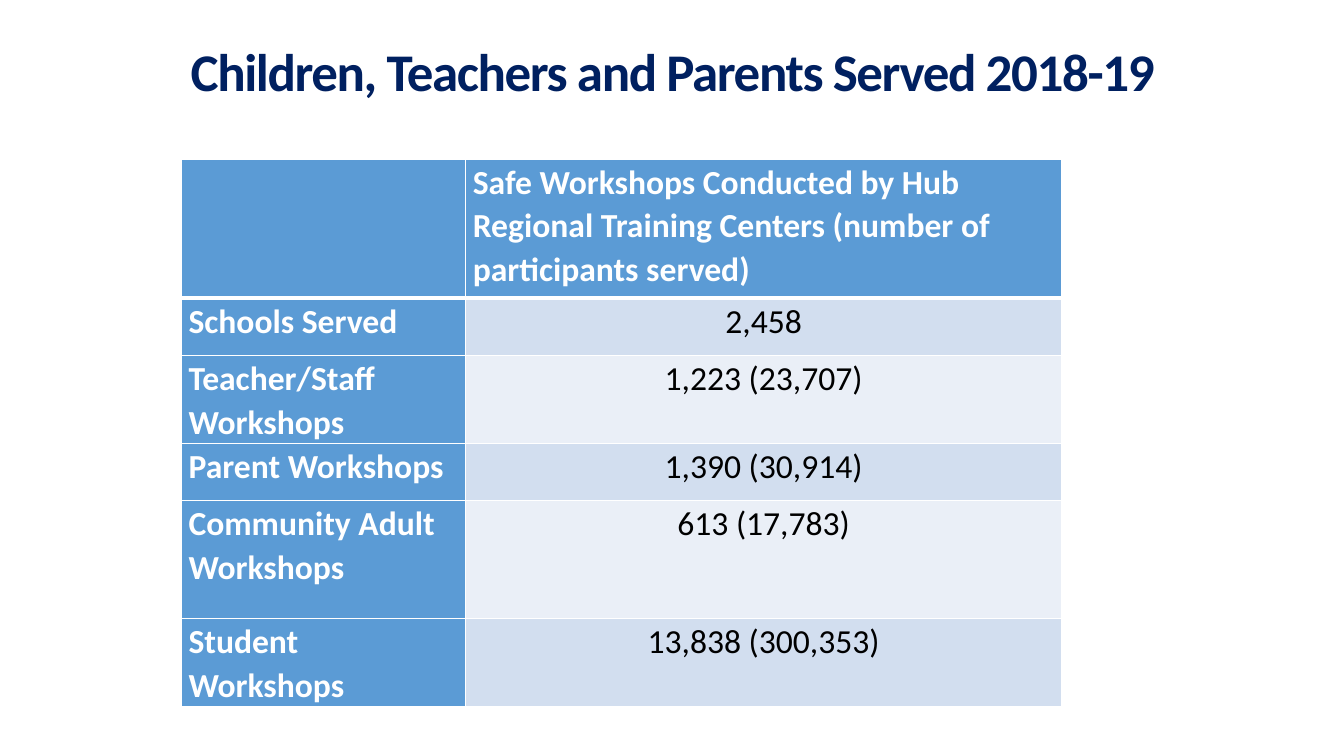
"""Build a slide with a table of the workshops held in 2018-19."""
from dataclasses import dataclass
from typing import Any

from lxml.etree import SubElement
from pptx import Presentation
from pptx.dml.color import RGBColor
from pptx.enum.text import MSO_ANCHOR as Anchor, PP_ALIGN as Align
from pptx.oxml.ns import qn
from pptx.slide import Slide
from pptx.table import _Cell as Cell
from pptx.text.text import _Paragraph as Paragraph
from pptx.util import Inches, Pt

NAVY = RGBColor(0x00, 0x20, 0x60)
BLUE = RGBColor(0x5B, 0x9B, 0xD5)
DARK_BAND = RGBColor(0xD2, 0xDE, 0xEF)
LIGHT_BAND = RGBColor(0xEA, 0xEF, 0xF7)
WHITE = RGBColor(0xFF, 0xFF, 0xFF)
BLACK = RGBColor(0x00, 0x00, 0x00)

TITLE = "Children, Teachers and Parents Served 2018-19"
COLUMN_WIDTHS = (2.82, 5.91)


@dataclass(frozen=True)
class Row:
    label: str
    value: str
    height: float


ROWS = (
    Row("", "Safe Workshops Conducted by Hub "
        "Regional Training Centers (number of participants served)", 1.38),
    Row("Schools Served", "2,458", 0.57),
    Row("Teacher/Staff Workshops", "1,223 (23,707)", 0.87),
    Row("Parent Workshops", "1,390 (30,914)", 0.57),
    Row("Community Adult Workshops", "613 (17,783)", 1.17),
    Row("Student Workshops", "13,838 (300,353)", 0.87),
)


def apply(target: Any, values: dict[str, Any]) -> None:
    """Set every named attribute on the target."""
    for name, value in values.items():
        setattr(target, name, value)


def write(para: Paragraph, text: str, size: float, color: RGBColor, bold: bool) -> Any:
    """Add a formatted span to a paragraph and return it."""
    span = para.add_run()
    span.text = text
    apply(span.font, {"name": "Calibri", "size": Pt(size), "bold": bold})
    span.font.color.rgb = color
    return span


def add_title(page: Slide) -> None:
    """Draw the centred slide title."""
    box = page.shapes.add_textbox(Inches(0.67), Inches(0.3), Inches(12), Inches(1.39))
    frame = box.text_frame
    apply(frame, {"word_wrap": True, "vertical_anchor": Anchor.BOTTOM,
                  "margin_bottom": Inches(0.68)})
    para = frame.paragraphs[0]
    para.alignment = Align.CENTER
    span = write(para, TITLE, 37.8, NAVY, True)
    span.font._element.set("spc", "-100")


def add_borders(cell: Cell, widths: dict[str, float]) -> None:
    """Give each side of a cell a white border of its own width."""
    properties = cell._tc.get_or_add_tcPr()
    for side, width in widths.items():
        line = SubElement(properties, qn(f"a:{side}"), w=str(Pt(width)))
        fill = SubElement(line, qn("a:solidFill"))
        SubElement(fill, qn("a:srgbClr"), val=str(WHITE))


def fill_cell(cell: Cell, text: str, fill: RGBColor, heading: bool) -> None:
    """Fill a cell and write its text."""
    apply(cell, {"margin_left": Inches(0.07), "margin_right": Inches(0.07),
                 "margin_top": 0, "margin_bottom": 0})
    cell.fill.solid()
    cell.fill.fore_color.rgb = fill
    para = cell.text_frame.paragraphs[0]
    apply(para, {"line_spacing": 1.07, "alignment": Align.LEFT if heading else Align.CENTER})
    if text:
        write(para, text, 24, WHITE if heading else BLACK, heading)


def add_workshop_table(page: Slide) -> None:
    """Draw the table with its heading row, heading column and bands."""
    height = sum(row.height for row in ROWS)
    table = page.shapes.add_table(
        len(ROWS), len(COLUMN_WIDTHS), Inches(1.8), Inches(1.58),
        Inches(sum(COLUMN_WIDTHS)), Inches(height)).table
    table.first_col = True
    for column, width in zip(table.columns, COLUMN_WIDTHS):
        column.width = Inches(width)
    for index, row in enumerate(ROWS):
        table.rows[index].height = Inches(row.height)
        band = DARK_BAND if index % 2 else LIGHT_BAND
        widths = {"lnL": 1, "lnR": 1, "lnT": 3 if index == 1 else 1,
                  "lnB": 3 if index == 0 else 1}
        for position, text in enumerate((row.label, row.value)):
            heading = index == 0 or position == 0
            cell = table.cell(index, position)
            add_borders(cell, widths)
            fill_cell(cell, text, BLUE if heading else band, heading)


def main() -> None:
    """Create the deck and save it."""
    deck = Presentation()
    apply(deck, {"slide_width": Inches(13.33), "slide_height": Inches(7.5)})
    page = deck.slides.add_slide(deck.slide_layouts[6])
    add_title(page)
    add_workshop_table(page)
    deck.save("out.pptx")


if __name__ == "__main__":
    main()
